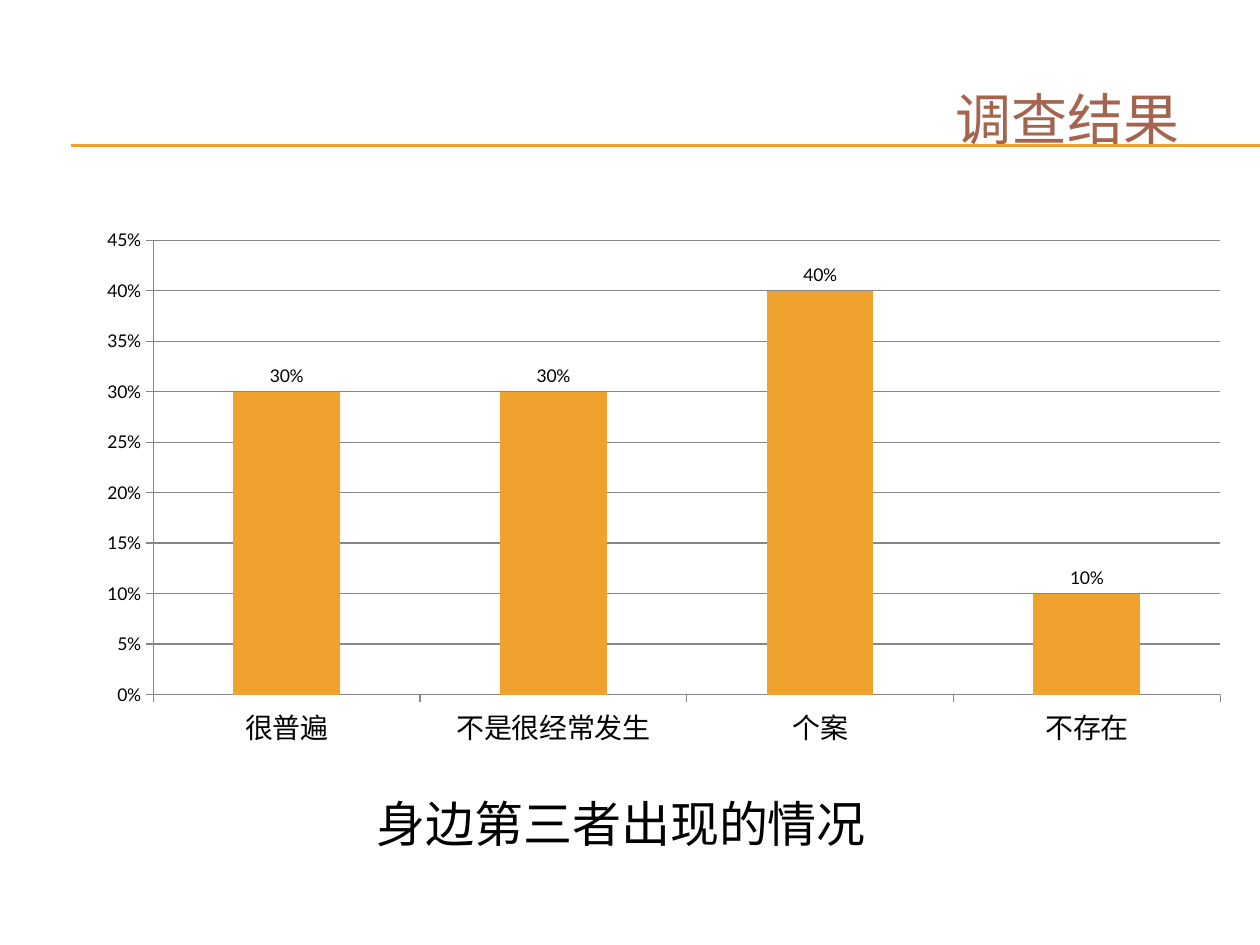
from dataclasses import dataclass

import lxml.etree
import pptx
import pptx.chart.data
import pptx.dml.color
import pptx.enum.chart
import pptx.enum.shapes
import pptx.enum.text
import pptx.oxml.ns
import pptx.util
from pptx.util import Inches

COLORS = {
    "accent": "F0A22E",
    "title": "A5644E",
    "text": "000000",
    "grid": "878787",
}
qn = pptx.oxml.ns.qn


@dataclass
class Label:
    text: str
    left: float
    top: float
    width: float
    height: float
    size: int
    color: str
    align: pptx.enum.text.PP_ALIGN


@dataclass
class Rule:
    left: float
    right: float
    y: float


def rgb(name: str) -> pptx.dml.color.RGBColor:
    return pptx.dml.color.RGBColor.from_string(COLORS[name])


def draw_rule(slide, rule: Rule) -> None:
    line = slide.shapes.add_connector(
        pptx.enum.shapes.MSO_CONNECTOR.STRAIGHT,
        Inches(rule.left), Inches(rule.y), Inches(rule.right), Inches(rule.y))
    line.line.color.rgb = rgb("accent")
    line.line.width = pptx.util.Pt(0.75)
    lxml.etree.SubElement(line._element.spPr, qn("a:effectLst"))


def write_label(shape, label: Label) -> None:
    shape.left, shape.top = Inches(label.left), Inches(label.top)
    shape.width, shape.height = Inches(label.width), Inches(label.height)
    frame = shape.text_frame
    frame.word_wrap = True
    frame.auto_size = pptx.enum.text.MSO_AUTO_SIZE.SHAPE_TO_FIT_TEXT
    frame.vertical_anchor = pptx.enum.text.MSO_ANCHOR.TOP
    paragraph = frame.paragraphs[0]
    paragraph.alignment = label.align
    run = paragraph.add_run()
    run.text = label.text
    run.font.size = pptx.util.Pt(label.size)
    run.font.name = "Arial"
    run.font.color.rgb = rgb(label.color)
    east_asian = lxml.etree.SubElement(run.font._element, qn("a:ea"))
    east_asian.set("typeface", "Arial")


def set_plot_area(chart, x: float, y: float, width: float, height: float) -> None:
    plot_area = chart._chartSpace.chart.plotArea
    for old in plot_area.findall(qn("c:layout")):
        plot_area.remove(old)
    layout = lxml.etree.Element(qn("c:layout"))
    plot_area.insert(0, layout)
    manual = lxml.etree.SubElement(layout, qn("c:manualLayout"))
    settings = {"layoutTarget": "inner", "xMode": "edge", "yMode": "edge",
                "x": x, "y": y, "w": width, "h": height}
    for tag, value in settings.items():
        lxml.etree.SubElement(manual, qn(f"c:{tag}")).set("val", str(value))


def draw_survey_chart(slide, answers: dict[str, float]) -> None:
    data = pptx.chart.data.CategoryChartData(number_format="0%")
    data.categories = list(answers)
    data.add_series("Series 1", list(answers.values()))
    chart = slide.shapes.add_chart(
        pptx.enum.chart.XL_CHART_TYPE.COLUMN_CLUSTERED,
        Inches(0.47), Inches(1.8), Inches(9.22), Inches(4.14), data).chart
    chart.has_legend = False
    chart.has_title = False
    chart.font.name = "Lato"
    chart.font.size = pptx.util.Pt(10)
    chart.font.color.rgb = rgb("text")
    set_plot_area(chart, 0.081, 0.026, 0.919, 0.871)

    # Columns and their labels
    plot = chart.plots[0]
    plot.vary_by_categories = False
    plot.gap_width = 150
    columns = plot.series[0].format.fill
    columns.solid()
    columns.fore_color.rgb = rgb("accent")
    plot.has_data_labels = True
    values = plot.data_labels
    values.show_value = True
    values.number_format = "0%"
    values.number_format_is_linked = False
    values.position = pptx.enum.chart.XL_LABEL_POSITION.OUTSIDE_END

    # Axes
    percent = chart.value_axis
    percent.minimum_scale, percent.maximum_scale = 0, 0.45
    percent.major_unit = 0.05
    percent.has_major_gridlines = True
    percent.tick_labels.number_format = "0%"
    percent.tick_labels.number_format_is_linked = False
    chart.category_axis.tick_labels.font.size = pptx.util.Pt(16)
    for axis in (percent, chart.category_axis):
        axis.major_tick_mark = pptx.enum.chart.XL_TICK_MARK.OUTSIDE
    for part in (percent, chart.category_axis, percent.major_gridlines):
        part.format.line.color.rgb = rgb("grid")
        part.format.line.width = pptx.util.Pt(0.75)


def main() -> None:
    deck = pptx.Presentation()
    deck.slide_width, deck.slide_height = Inches(10), Inches(7.5)
    slide = deck.slides.add_slide(deck.slide_layouts[5])

    # Double rule under the title
    for y in (1.15, 1.16):
        draw_rule(slide, Rule(0.56, 10, y))

    # Survey answers
    draw_survey_chart(slide, {
        "很普遍": 0.3, "不是很经常发生": 0.3, "个案": 0.4, "不存在": 0.1})

    # Caption and title
    align = pptx.enum.text.PP_ALIGN
    caption = Label("身边第三者出现的情况", 2.89, 6.25, 5.31, 0.57, 28, "text", align.LEFT)
    heading = Label("调查结果", 6.41, 0.62, 3.05, 0.64, 32, "title", align.RIGHT)
    write_label(slide.shapes.add_textbox(0, 0, 0, 0), caption)
    write_label(slide.shapes.title, heading)

    deck.save("out.pptx")


if __name__ == "__main__":
    main()
